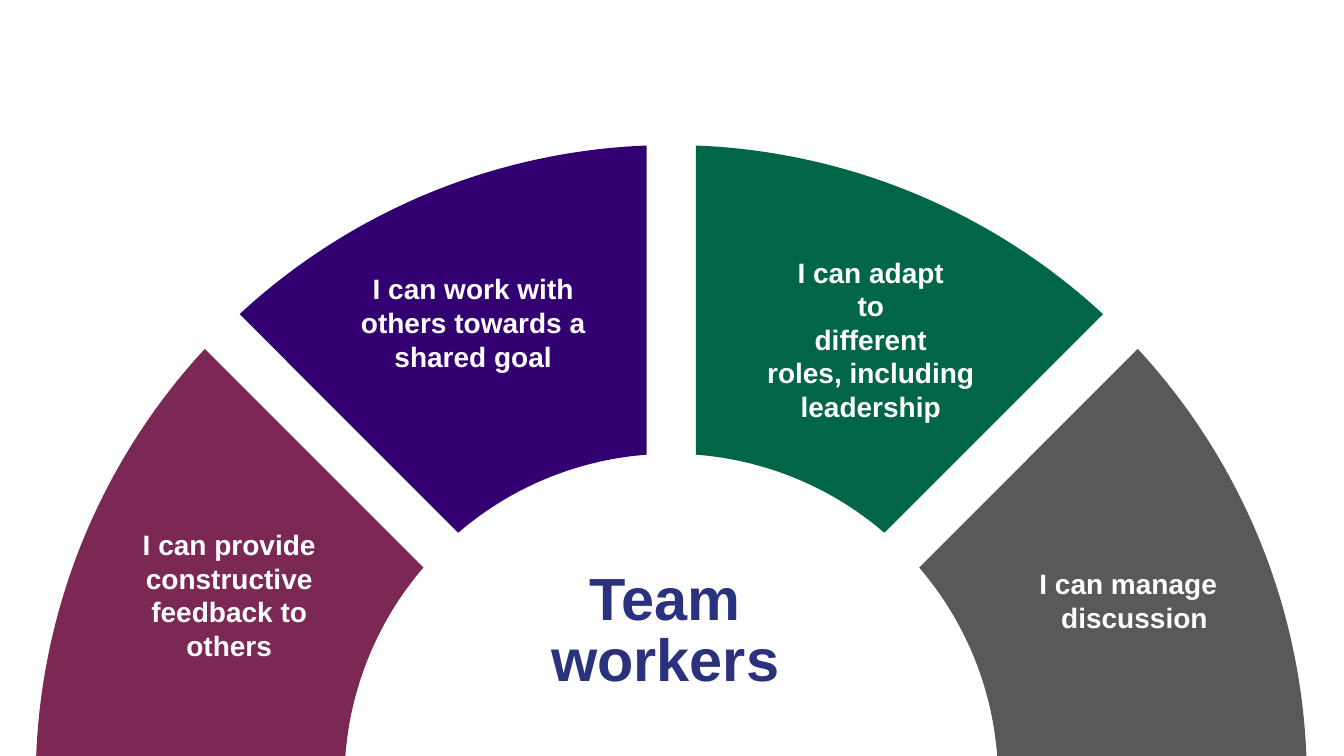
from dataclasses import dataclass
from math import asin, cos, radians, sin

from pptx import Presentation
from pptx.dml.color import RGBColor
from pptx.enum.text import PP_ALIGN
from pptx.util import Pt


@dataclass(frozen=True)
class Theme:
    font: str = "Arial"
    title_size: float = 42.5
    label_size: float = 20
    title_color: str = "2A317D"
    label_color: str = "FFFFFF"
    sectors: tuple = ("7C2854", "330072", "006647", "58595B")


THEME = Theme()
CENTER_X, CENTER_Y = 479.5, 557.6
OUTER_RADIUS, INNER_RADIUS = 454, 233.5
HALF_GAP = 17.6
SECTOR_ANGLE = 45
ARC_STEPS = 40


def arc_points(radius, start, end):
    inset = asin(HALF_GAP / radius)
    first, last = radians(start) + inset, radians(end) - inset
    angles = [first + (last - first) * step / ARC_STEPS for step in range(ARC_STEPS + 1)]
    return [
        (Pt(CENTER_X - radius * cos(angle)), Pt(CENTER_Y - radius * sin(angle)))
        for angle in angles
    ]


def add_sector(slide, index, color):
    start = index * SECTOR_ANGLE
    end = start + SECTOR_ANGLE
    outer = arc_points(OUTER_RADIUS, start, end)
    inner = arc_points(INNER_RADIUS, start, end)
    builder = slide.shapes.build_freeform(*outer[0])
    builder.add_line_segments(outer[1:] + inner[::-1], close=True)
    shape = builder.convert_to_shape()
    shape.shadow.inherit = False
    shape.fill.solid()
    shape.fill.fore_color.rgb = RGBColor.from_string(color)
    shape.line.fill.background()


def add_text(slide, box, text, size, color, top_inset=0.7):
    text_box = slide.shapes.add_textbox(*(Pt(length) for length in box))
    text_frame = text_box.text_frame
    text_frame.word_wrap = True
    text_frame.margin_left = text_frame.margin_right = text_frame.margin_bottom = 0
    text_frame.margin_top = Pt(top_inset)
    text_frame.text = text
    for paragraph in text_frame.paragraphs:
        paragraph.alignment = PP_ALIGN.CENTER
        for run in paragraph.runs:
            run.font.name = THEME.font
            run.font.size = Pt(size)
            run.font.bold = True
            run.font.color.rgb = RGBColor.from_string(color)
    return text_frame.paragraphs[0]


def add_label(slide, box, text):
    return add_text(slide, box, text, THEME.label_size, THEME.label_color)


def align_left(paragraph, margin, indent):
    paragraph.alignment = PP_ALIGN.LEFT
    properties = paragraph._p.get_or_add_pPr()
    properties.set("marL", str(Pt(margin)))
    properties.set("indent", str(Pt(indent)))


def main():
    presentation = Presentation()
    presentation.slide_width, presentation.slide_height = Pt(960), Pt(540)
    slide = presentation.slides.add_slide(presentation.slide_layouts[6])

    for index, color in enumerate(THEME.sectors):
        add_sector(slide, index, color)

    title = add_text(slide, (393, 399.6, 166, 99), "Team workers",
                     THEME.title_size, THEME.title_color, top_inset=9.4)
    title.line_spacing = Pt(43)
    align_left(title, 0.7, 27.4)

    discussion = add_label(slide, (741, 404, 129, 50), "I can manage discussion")
    align_left(discussion, 17, -15.6)

    add_label(slide, (101, 376, 125.5, 98), "I can provide constructive feedback to others")
    add_label(slide, (256.5, 193.5, 163, 74), "I can work with others towards a shared goal")
    add_label(slide, (547, 181.5, 150, 122),
              "I can adapt\vto\vdifferent\nroles, including leadership")

    presentation.save("out.pptx")


if __name__ == "__main__":
    main()
